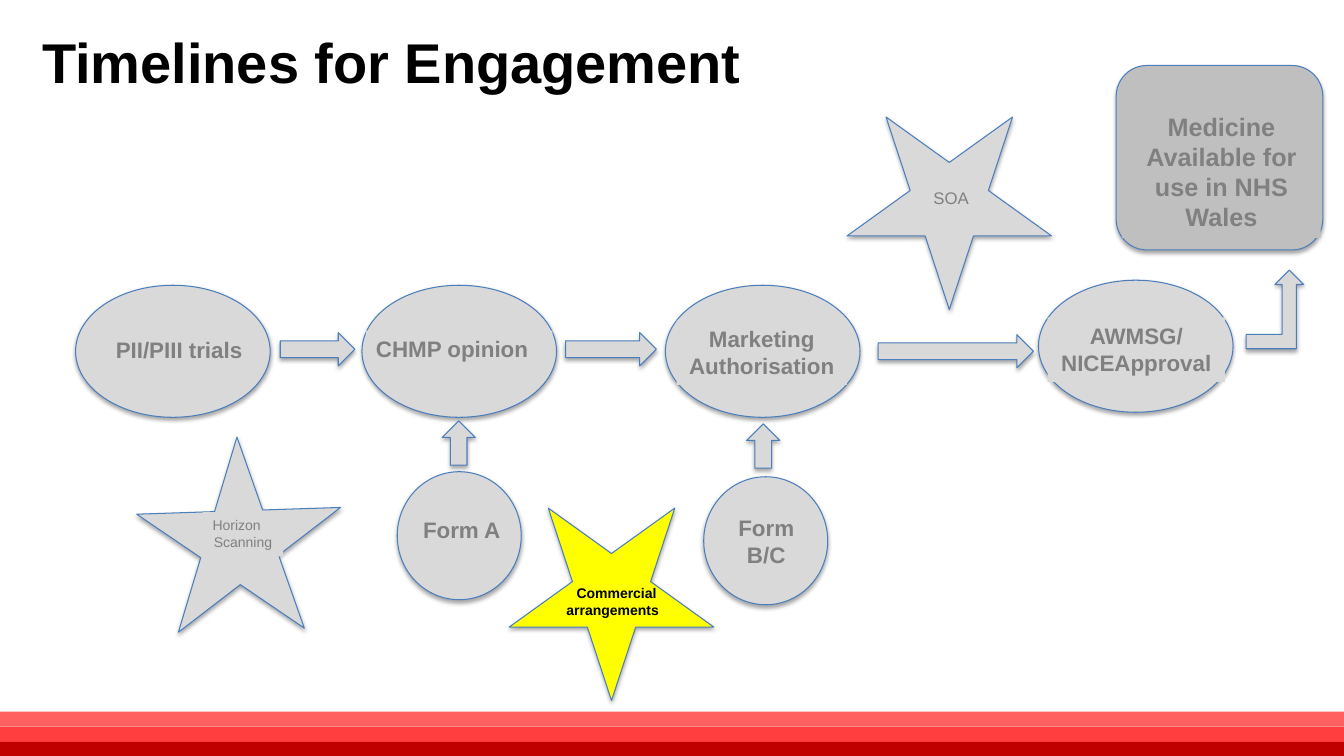
from lxml.etree import SubElement
from pptx import Presentation
from pptx.dml.color import RGBColor
from pptx.enum.shapes import MSO_SHAPE
from pptx.enum.text import MSO_ANCHOR, PP_ALIGN
from pptx.oxml.ns import qn
from pptx.util import Inches, Pt

BLACK = RGBColor(0x00, 0x00, 0x00)
TEXT_GREY = RGBColor(0x80, 0x80, 0x80)
LIGHT_GREY = RGBColor(0xD9, 0xD9, 0xD9)
MID_GREY = RGBColor(0xBF, 0xBF, 0xBF)
YELLOW = RGBColor(0xFF, 0xFF, 0x00)
OUTLINE_BLUE = RGBColor(0x4B, 0x7E, 0xBC)
FOOTER_REDS = (RGBColor(0xFF, 0x61, 0x61), RGBColor(0xFF, 0x3F, 0x3F),
               RGBColor(0xC0, 0x00, 0x00))

LEFT, CENTER = PP_ALIGN.LEFT, PP_ALIGN.CENTER
COLS, ROWS = 13.33, 7.5  # grid of one-inch cells


class TimelineSlide:
    font = "Arial"

    def __init__(self, prs):
        self.col = prs.slide_width / COLS
        self.row = prs.slide_height / ROWS
        self.shapes = prs.slides.add_slide(prs.slide_layouts[6]).shapes

    def box(self, x, y, w, h):
        return (round(x * self.col), round(y * self.row),
                round(w * self.col), round(h * self.row))

    def plain(self, kind, at, fill):
        sp = self.shapes.add_shape(kind, *self.box(*at))
        sp.shadow.inherit = False
        sp.fill.solid()
        sp.fill.fore_color.rgb = fill
        sp.line.fill.background()
        return sp

    def outlined(self, kind, at, fill=LIGHT_GREY, rotation=0):
        sp = self.plain(kind, at, fill)
        sp.line.color.rgb = OUTLINE_BLUE
        sp.line.width = Pt(0.75)
        sp.rotation = rotation
        # Soft shadow straight below the shape
        effects = sp._element.spPr.find(qn("a:effectLst"))
        shadow = SubElement(effects, qn("a:outerShdw"), blurRad=str(Pt(3.1)),
                            dist=str(Pt(1.8)), dir="5400000", rotWithShape="0")
        color = SubElement(shadow, qn("a:srgbClr"), val=str(BLACK))
        SubElement(color, qn("a:alpha"), val="35000")

    def set_text(self, sp, lines, size, color, bold=True, anchor=MSO_ANCHOR.TOP):
        tf = sp.text_frame
        tf.word_wrap = True
        tf.vertical_anchor = anchor
        for i, (text, align) in enumerate(lines):
            p = tf.add_paragraph() if i else tf.paragraphs[0]
            p.text = text
            p.alignment = align
            p.font.name = self.font
            p.font.size = Pt(size)
            p.font.bold = bold
            p.font.color.rgb = color

    def text(self, at, lines, size, color, **style):
        sp = self.shapes.add_textbox(*self.box(*at))
        self.set_text(sp, lines, size, color, **style)

    def label(self, at, lines, size=16, fill=LIGHT_GREY, bold=True):
        sp = self.plain(MSO_SHAPE.RECTANGLE, at, fill)
        self.set_text(sp, lines, size, TEXT_GREY, bold)


def main():
    prs = Presentation()
    prs.slide_width, prs.slide_height = Inches(COLS), Inches(ROWS)
    s = TimelineSlide(prs)

    # Footer bands
    for i, red in enumerate(FOOTER_REDS):
        s.plain(MSO_SHAPE.RECTANGLE, (0, 7.06 + 0.15 * i, COLS, 0.15), red)

    # Title
    s.text((0.32, 0.19, 7.16, 0.83), [("Timelines for Engagement", LEFT)], 40, BLACK,
           anchor=MSO_ANCHOR.MIDDLE)

    # Engagement stars
    for x, y, fill, rotation in ((1.42, 4.52, LIGHT_GREY, 142.4),
                                 (5.05, 5.04, YELLOW, 180),
                                 (8.4, 1.16, LIGHT_GREY, 180)):
        s.outlined(MSO_SHAPE.STAR_5_POINT, (x, y, 2.03, 1.91), fill, rotation)

    # Stages and submission forms
    for x, y in ((0.75, 2.83), (3.59, 2.83), (6.6, 2.83), (10.3, 2.78)):
        s.outlined(MSO_SHAPE.OVAL, (x, y, 1.93, 1.31))
    for x, y in ((3.94, 4.68), (6.98, 4.73)):
        s.outlined(MSO_SHAPE.OVAL, (x, y, 1.23, 1.27))
    s.outlined(MSO_SHAPE.ROUNDED_RECTANGLE, (11.07, 0.65, 2.05, 1.83), MID_GREY)

    # Labels
    for at, text, align in (
            ((1.05, 3.29, 1.55, 0.37), "PII/PIII trials", LEFT),
            ((3.63, 3.28, 1.85, 0.37), "CHMP opinion", LEFT),
            ((6.71, 3.18, 1.69, 0.64), "Marketing Authorisation", CENTER),
            ((10.39, 3.15, 1.76, 0.64), "AWMSG/NICEApproval", CENTER),
            ((4.05, 5.07, 1.06, 0.37), "Form A", CENTER),
            ((7.08, 5.05, 1.04, 0.64), "Form B/C", CENTER)):
        s.label(at, [(text, align)])
    s.label((11.13, 1.05, 1.97, 1.31),
            [("Medicine Available for use in NHS Wales", CENTER)], 18, MID_GREY)
    s.label((2.01, 5.08, 0.8, 0.44), [("Horizon", LEFT), ("Scanning", CENTER)], 10,
            bold=False)
    s.text((5.52, 5.75, 1.19, 0.44), [("Commercial", CENTER), ("arrangements", LEFT)],
           10, BLACK)
    s.text((9.16, 1.81, 1.06, 0.3), [("SOA", LEFT)], 12, TEXT_GREY, bold=False)

    # Arrows
    for x, y, w, rotation in ((2.78, 3.3, 0.74, 0), (5.61, 3.3, 0.9, 0),
                              (8.71, 3.32, 1.54, 0), (4.33, 4.23, 0.44, 270),
                              (7.35, 4.26, 0.44, 270)):
        s.outlined(MSO_SHAPE.RIGHT_ARROW, (x, y, w, 0.33), rotation=rotation)
    s.outlined(MSO_SHAPE.BENT_UP_ARROW, (12.36, 2.68, 0.57, 0.78))

    prs.save("out.pptx")


if __name__ == "__main__":
    main()
